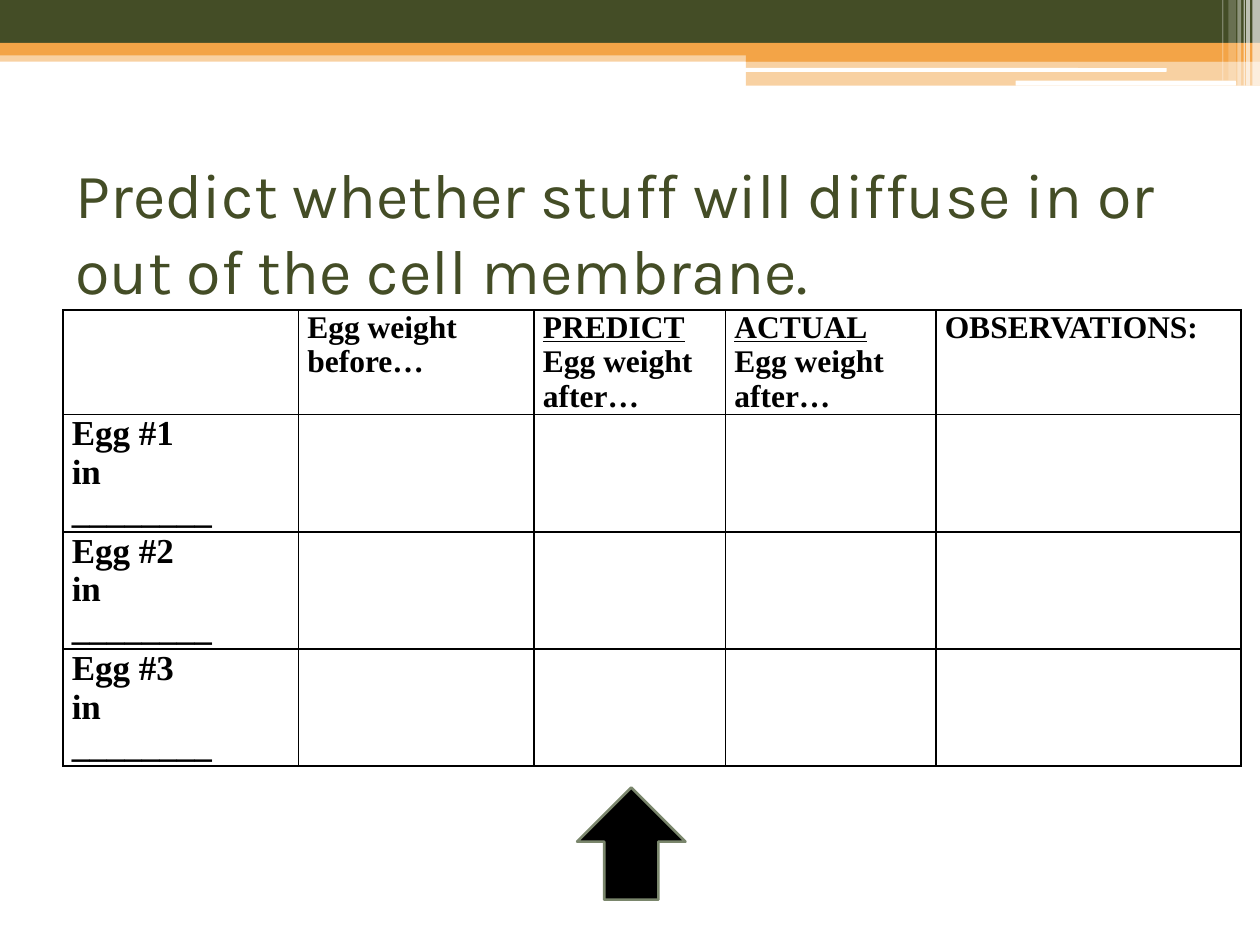
"""Build the egg diffusion prediction slide with its results table."""
from lxml.etree import SubElement
from pptx import Presentation
from pptx.dml.color import RGBColor as RGB
from pptx.enum.shapes import MSO_SHAPE as SHAPE
from pptx.enum.text import MSO_ANCHOR as ANCHOR, PP_ALIGN as ALIGN
from pptx.oxml import parse_xml
from pptx.oxml.ns import nsdecls, qn
from pptx.util import Inches, Pt

THEME = {
    "green": "444D26", "orange": "F3A447", "white": "FFFFFF",
    "black": "000000", "edge": "7A866C",
    "title_font": "Karla", "table_font": "Times New Roman",
    "title": 36, "header": 18, "label": 20,
}
TITLE = "Predict whether stuff will diffuse in or out of the cell membrane."
HEADERS = [
    [],
    ["Egg weight before…"],
    ["PREDICT", "Egg weight after…"],
    ["ACTUAL", "Egg weight after…"],
    ["OBSERVATIONS:"],
]
UNDERLINED = {"PREDICT", "ACTUAL"}
EGGS = [[f"Egg #{n}", "in", "________"] for n in (1, 2, 3)]
COLUMNS = [1.87, 1.87, 1.52, 1.67, 2.42]
ROWS = [0.83] + [0.93] * len(EGGS)
BANDS = [
    (0, 0.4, 10, 0.09, "orange", 50),
    (0, 0, 10, 0.34, "green", 100),
    (0, 0.34, 10, 0.1, "orange", 100),
    (5.92, 0.39, 4.08, 0.1, "orange", 100),
    (5.92, 0.48, 4.08, 0.2, "orange", 50),
]
PILLS = [(5.91, 0.54, 3.35, 0.03), (8.06, 0.64, 1.75, 0.04)]
STRIPES = [
    (9.94, 0.06, 0.68, 65), (9.89, 0.03, 0.68, 65), (9.87, 0.01, 0.68, 60),
    (9.82, 0.03, 0.68, 40), (9.75, 0.06, 0.64, 20), (9.7, 0.01, 0.64, 30),
]


def color(name):
    return RGB.from_string(THEME[name])


def add_shape(slide, kind, box, fill, alpha=100):
    sp = slide.shapes.add_shape(kind, *map(Inches, box))
    sp.shadow.inherit = False
    sp.fill.solid()
    sp.fill.fore_color.rgb = color(fill)
    sp.line.fill.background()
    if alpha < 100:
        clr = sp.fill._xPr.find(qn("a:solidFill"))[0]
        SubElement(clr, qn("a:alpha"), val=str(alpha * 1000))
    return sp


def write(p, text, fill, **font):
    r = p.add_run()
    r.text = text
    r.font.color.rgb = color(fill)
    for name, value in font.items():
        setattr(r.font, name, value)


def add_banner(slide):
    for *box, fill, alpha in BANDS:
        add_shape(slide, SHAPE.RECTANGLE, box, fill, alpha)
    for box in PILLS:
        add_shape(slide, SHAPE.ROUNDED_RECTANGLE, box, "white")
    for x, w, h, alpha in STRIPES:
        add_shape(slide, SHAPE.RECTANGLE, (x, 0, w, h), "white", alpha)


def add_title(slide):
    sp = slide.shapes.title
    box = dict(left=0.5, top=1.25, width=9, height=1.17)
    for name, value in box.items():
        setattr(sp, name, Inches(value))
    tf = sp.text_frame
    tf.word_wrap = True
    tf.vertical_anchor = ANCHOR.MIDDLE
    p = tf.paragraphs[0]
    p.alignment = ALIGN.LEFT
    write(p, TITLE, "green", name=THEME["title_font"], size=Pt(THEME["title"]))


def fill_cell(cell, lines, size):
    margins = dict(margin_left=0.07, margin_right=0.07, margin_top=0, margin_bottom=0)
    for name, value in margins.items():
        setattr(cell, name, Inches(value))
    tf = cell.text_frame
    for i, text in enumerate(lines):
        p = tf.add_paragraph() if i else tf.paragraphs[0]
        write(p, text, "black", name=THEME["table_font"], size=Pt(size),
              bold=True, underline=text in UNDERLINED)
    cell.fill.background()
    tc_pr = cell._tc.get_or_add_tcPr()
    for i, side in enumerate("LRTB"):
        tc_pr.insert(i, parse_xml(
            f'<a:ln{side} {nsdecls("a")} w="{Pt(1)}"><a:solidFill>'
            f'<a:srgbClr val="{THEME["black"]}"/></a:solidFill></a:ln{side}>'))


def add_results(slide):
    rows = [HEADERS] + [[egg] + [[]] * (len(COLUMNS) - 1) for egg in EGGS]
    box = (0.5, 2.46, sum(COLUMNS), sum(ROWS))
    table = slide.shapes.add_table(len(ROWS), len(COLUMNS), *map(Inches, box)).table
    table.first_row = table.horz_banding = False
    for col, width in zip(table.columns, COLUMNS):
        col.width = Inches(width)
    for i, (row, height, cells) in enumerate(zip(table.rows, ROWS, rows)):
        row.height = Inches(height)
        size = THEME["label" if i else "header"]
        for cell, lines in zip(row.cells, cells):
            fill_cell(cell, lines, size)


def add_arrow(slide):
    sp = add_shape(slide, SHAPE.DOWN_ARROW, (4.58, 6.25, 0.86, 0.89), "black")
    sp.rotation = 180
    sp.line.color.rgb = color("edge")
    sp.line.width = Pt(1.5)


def main():
    prs = Presentation()
    prs.slide_width, prs.slide_height = Inches(10), Inches(7.5)
    slide = prs.slides.add_slide(prs.slide_layouts[5])
    add_banner(slide)
    add_title(slide)
    add_results(slide)
    add_arrow(slide)
    prs.save("out.pptx")


if __name__ == "__main__":
    main()
